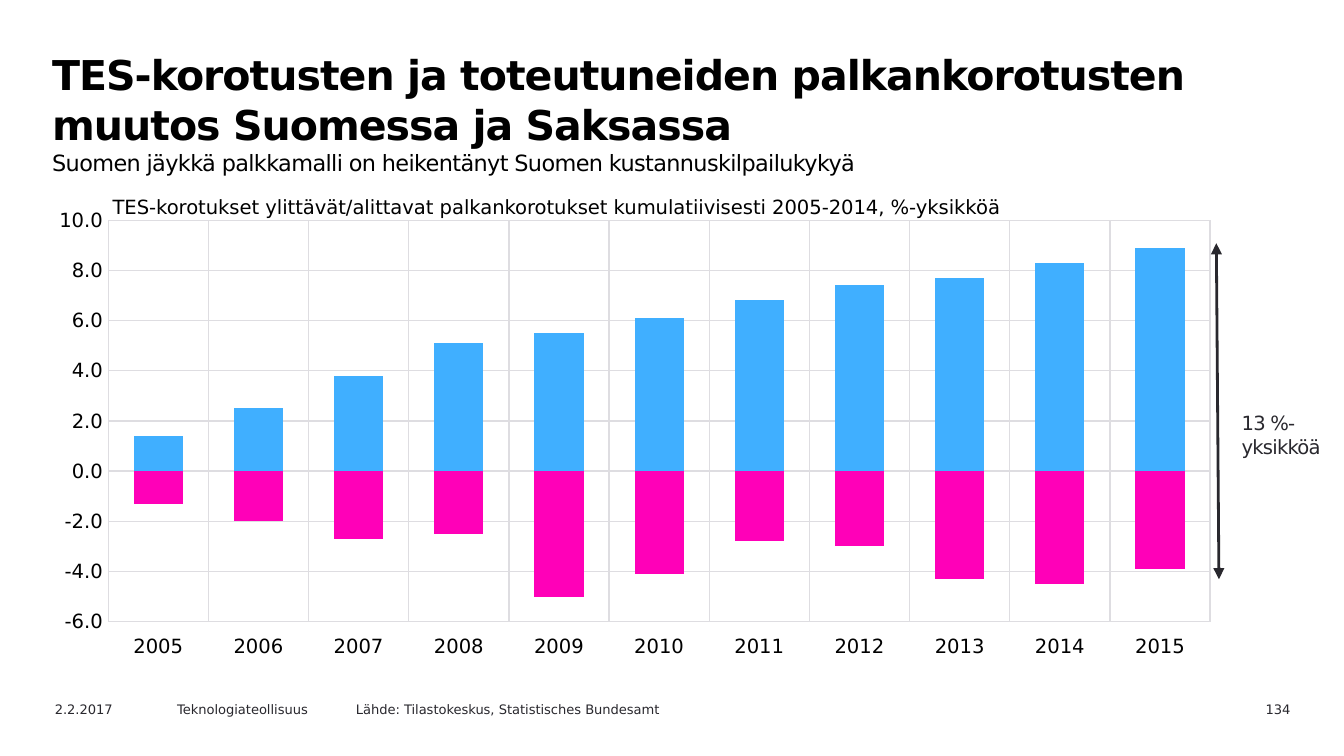
from dataclasses import dataclass

from lxml import etree
from pptx import Presentation
from pptx.chart.data import CategoryChartData
from pptx.dml.color import RGBColor
from pptx.enum.chart import XL_CHART_TYPE as ChartType
from pptx.enum.chart import XL_TICK_LABEL_POSITION as LabelPosition
from pptx.enum.chart import XL_TICK_MARK as TickMark
from pptx.enum.shapes import MSO_CONNECTOR as Connector
from pptx.enum.text import PP_ALIGN as Align
from pptx.oxml.ns import qn
from pptx.util import Inches, Pt

FONT = "DejaVu Sans"
BLACK, INK, GRID = "000000", "29282E", "DEDDE1"
YEARS = range(2005, 2016)
SLIDE_WIDTH = 10
SLIDE_HEIGHT = SLIDE_WIDTH * 9 / 16


@dataclass
class Line:
    """One paragraph; tracking and leading are in points."""
    text: str
    size: float = 7
    color: str = INK
    bold: bool = False
    tracking: float = 0
    leading: float | None = None
    align: Align = Align.LEFT


@dataclass
class TextBlock:
    left: float
    top: float
    width: float
    height: float
    lines: list[Line]
    wrap: bool = True


@dataclass
class Country:
    name: str
    color: str
    gaps: list[float]


FOOTER_TOP, FOOTER_HEIGHT = 5.17, 0.18
TEXT_BLOCKS = [
    TextBlock(0.29, 0.31, 8.9, 0.71, [
        Line("TES-korotusten ja toteutuneiden palkankorotusten muutos Suomessa ja Saksassa",
             22, BLACK, bold=True, tracking=-0.5, leading=27),
        Line("Suomen jäykkä palkkamalli on heikentänyt Suomen kustannuskilpailukykyä",
             12, BLACK, tracking=-0.34),
    ]),
    TextBlock(0.74, 1.4, 8.13, 0.28, [
        Line("TES-korotukset ylittävät/alittavat palkankorotukset kumulatiivisesti 2005-2014, %-yksikköä",
             10.5, BLACK),
    ]),
    TextBlock(9.14, 3.01, 0.85, 0.45,
              [Line(text, 10.5, tracking=-0.4) for text in ("13 %-", "yksikköä")], wrap=False),
    TextBlock(0.31, FOOTER_TOP, 1, FOOTER_HEIGHT, [Line("2.2.2017")]),
    TextBlock(1.22, FOOTER_TOP, 1.42, FOOTER_HEIGHT, [Line("Teknologiateollisuus")]),
    TextBlock(2.55, FOOTER_TOP, 3.86, FOOTER_HEIGHT,
              [Line("Lähde: Tilastokeskus, Statistisches Bundesamt")]),
    TextBlock(8.76, FOOTER_TOP, 0.94, FOOTER_HEIGHT, [Line("134", align=Align.RIGHT)]),
]
COUNTRIES = [
    Country("Suomi", "40AFFF", [1.4, 2.5, 3.8, 5.1, 5.5, 6.1, 6.8, 7.4, 7.7, 8.3, 8.9]),
    Country("Saksa", "FF00B8", [-1.3, -2, -2.7, -2.5, -5, -4.1, -2.8, -3, -4.3, -4.5, -3.9]),
]


def rgb(color: str) -> RGBColor:
    return RGBColor.from_string(color)


def set_font(font, size: float, color: str, bold: bool = False) -> None:
    font.name, font.size, font.bold = FONT, Pt(size), bold
    font.color.rgb = rgb(color)


def set_line(line, color: str, width: float) -> None:
    line.color.rgb = rgb(color)
    line.width = Pt(width)


def add_text(slide, block: TextBlock) -> None:
    frame = slide.shapes.add_textbox(Inches(block.left), Inches(block.top),
                                     Inches(block.width), Inches(block.height)).text_frame
    frame.word_wrap = block.wrap
    for index, line in enumerate(block.lines):
        paragraph = frame.add_paragraph() if index else frame.paragraphs[0]
        paragraph.text = line.text
        paragraph.alignment = line.align
        if line.leading:
            paragraph.line_spacing = Pt(line.leading)
        set_font(paragraph.font, line.size, line.color, line.bold)
        if line.tracking:
            properties = paragraph.runs[0].font._element
            properties.set("spc", str(round(line.tracking * 100)))


def place_plot(chart, x: float, y: float, w: float, h: float) -> None:
    """Fix the inner plot area, in fractions of the chart."""
    plot_area = chart._chartSpace.chart.plotArea
    for old in plot_area.findall(qn("c:layout")):
        plot_area.remove(old)
    layout = etree.Element(qn("c:layout"))
    manual = etree.SubElement(layout, qn("c:manualLayout"))
    settings = {"layoutTarget": "inner", "xMode": "edge", "yMode": "edge",
                "x": x, "y": y, "w": w, "h": h}
    for tag, value in settings.items():
        etree.SubElement(manual, qn(f"c:{tag}")).set("val", str(value))
    plot_area.insert(0, layout)


def add_gap_chart(slide) -> None:
    data = CategoryChartData(number_format="0.0")
    data.categories = [str(year) for year in YEARS]
    for country in COUNTRIES:
        data.add_series(country.name, country.gaps)
    chart = slide.shapes.add_chart(ChartType.COLUMN_CLUSTERED, Inches(0.42), Inches(1.4),
                                   Inches(8.76), Inches(3.68), data).chart
    set_font(chart.font, 10, INK)
    chart.has_title = chart.has_legend = False
    place_plot(chart, 0.044, 0.065, 0.936, 0.812)

    plot = chart.plots[0]
    plot.gap_width, plot.overlap, plot.vary_by_categories = 104, 100, False
    for series, country in zip(plot.series, COUNTRIES):
        series.invert_if_negative = False
        series.format.fill.solid()
        series.format.fill.fore_color.rgb = rgb(country.color)

    years, points = chart.category_axis, chart.value_axis
    for axis in (years, points):
        axis.major_tick_mark = axis.minor_tick_mark = TickMark.NONE
        axis.has_major_gridlines = True
        set_line(axis.major_gridlines.format.line, GRID, 0.75)
        set_font(axis.tick_labels.font, 10.5, BLACK)
    years.tick_label_position = LabelPosition.LOW
    set_line(years.format.line, GRID, 0.75)
    points.format.line.fill.background()
    points.minimum_scale, points.maximum_scale, points.major_unit = -6, 10, 2
    points.tick_labels.number_format = "0.0"
    points.tick_labels.number_format_is_linked = False


def add_span_arrow(slide) -> None:
    arrow = slide.shapes.add_connector(Connector.STRAIGHT, Inches(9.05), Inches(1.81),
                                       Inches(9.07), Inches(4.31))
    set_line(arrow.line, INK, 1.5)
    outline = arrow.line._get_or_add_ln()
    for end in ("a:headEnd", "a:tailEnd"):
        etree.SubElement(outline, qn(end)).set("type", "triangle")
    etree.SubElement(arrow._element.spPr, qn("a:effectLst"))


def main() -> None:
    presentation = Presentation()
    presentation.slide_width = Inches(SLIDE_WIDTH)
    presentation.slide_height = Inches(SLIDE_HEIGHT)
    slide = presentation.slides.add_slide(presentation.slide_layouts[6])
    add_gap_chart(slide)
    for block in TEXT_BLOCKS:
        add_text(slide, block)
    add_span_arrow(slide)
    presentation.save("out.pptx")


if __name__ == "__main__":
    main()
